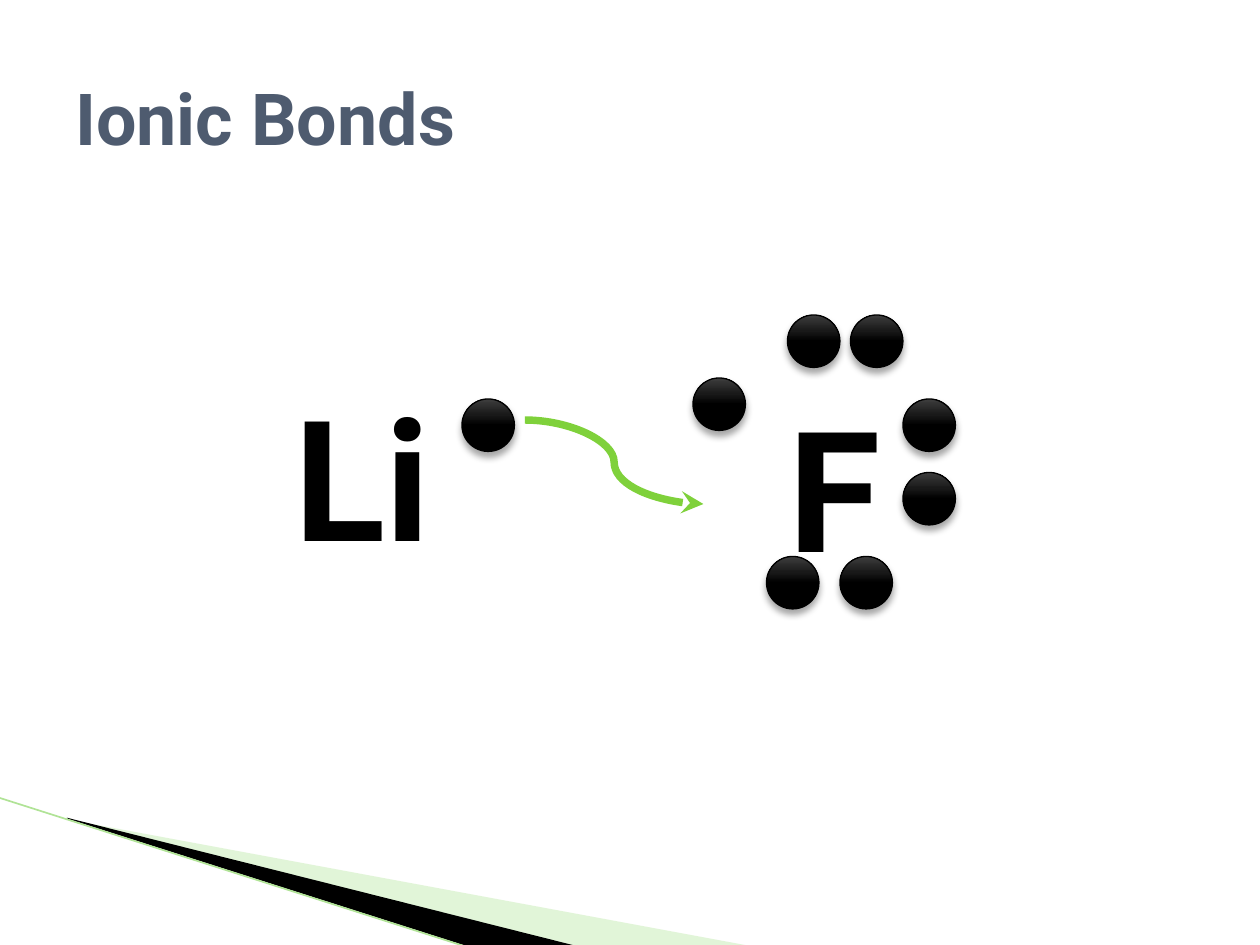
from lxml import etree
from pptx import Presentation
from pptx import util as u
from pptx.dml import color
from pptx.enum import shapes, text
from pptx.oxml import ns

Pt = u.Pt
GREEN, BLACK, SLATE = "7FD13B", "000000", "4E5B6F"
DOT = 30
DOT_STOPS = [(0, BLACK), (50, BLACK), (70, "191919"), (100, "3E3E3E")]


def rgb(value):
    return color.RGBColor.from_string(value)


def child(parent, tag, **attributes):
    """Append a drawing element with the given attributes."""
    values = {name: str(value) for name, value in attributes.items()}
    return etree.SubElement(parent, ns.qn(f"a:{tag}"), values)


def add_label(page, box, words, size, hue, **frame_format):
    frame = page.shapes.add_textbox(*map(Pt, box)).text_frame
    settings = {"word_wrap": True, "auto_size": text.MSO_AUTO_SIZE.NONE, **frame_format}
    for name, value in settings.items():
        setattr(frame, name, value)
    para = frame.paragraphs[0]
    span = para.add_run()
    span.text = words
    for name, value in {"name": "Roboto", "size": Pt(size), "bold": True}.items():
        setattr(span.font, name, value)
    span.font.color.rgb = rgb(hue)
    return para


def add_line(page, kind, start, end, hue, width):
    line = page.shapes.add_connector(kind, *map(Pt, start + end))
    line.line.color.rgb = rgb(hue)
    line.line.width = Pt(width)
    child(line._element.spPr, "effectLst")
    return line


def add_wedge(page, points, hue, opacity=100):
    corners = [tuple(map(Pt, point)) for point in points]
    builder = page.shapes.build_freeform(*corners[0])
    builder.add_line_segments(corners[1:], close=True)
    wedge = builder.convert_to_shape()
    wedge.shadow.inherit = False
    wedge.fill.solid()
    wedge.fill.fore_color.rgb = rgb(hue)
    wedge.line.fill.background()
    if opacity < 100:
        shade = wedge._element.spPr.find(".//" + ns.qn("a:srgbClr"))
        child(shade, "alpha", val=opacity * 1000)


def add_corner_bands(page, left, bottom):
    """Draw the slanted bands that run down to the bottom edge."""
    pale = [(39.6, -71.5), (428.4, 0.5), (328.3, 0.5), (39.6, -72)]
    dark = [(38.2, -72.7), (329, 0.5), (267.8, 1), (38.9, -72)]
    for points, hue, opacity in [(pale, "B6E69E", 40), (dark, BLACK, 100)]:
        add_wedge(page, [(left + x, bottom + y) for x, y in points], hue, opacity)
    add_line(page, shapes.MSO_CONNECTOR.STRAIGHT, (left - 0.7, bottom - 84.2),
             (left + 267.1, bottom + 1.2), "B0E396", 0.95)


def add_electron(page, left, top):
    dot = page.shapes.add_shape(shapes.MSO_SHAPE.OVAL, Pt(left), Pt(top), Pt(DOT), Pt(DOT))
    dot.fill.gradient()
    dot.fill.gradient_angle = 90
    dot.line.color.rgb = rgb(BLACK)
    dot.line.width = Pt(0.75)
    dot.shadow.inherit = False
    properties = dot._element.spPr
    stops = properties.find(".//" + ns.qn("a:gsLst"))
    for stop in list(stops):
        stops.remove(stop)
    for place, hue in DOT_STOPS:
        child(child(stops, "gs", pos=place * 1000), "srgbClr", val=hue)
    shadow = child(properties.find(ns.qn("a:effectLst")), "outerShdw", blurRad=Pt(4),
                   dist=Pt(3), dir=90 * 60000, rotWithShape=0)
    child(child(shadow, "srgbClr", val=BLACK), "alpha", val=35000)


def add_atom(page, box, symbol, electrons):
    """Write the symbol in the box, with electrons offset from its corner."""
    para = add_label(page, box, symbol, 96, BLACK)
    para.alignment = text.PP_ALIGN.CENTER
    for x, y in electrons:
        add_electron(page, box[0] + x, box[1] + y)


def add_transfer_arrow(page, start, end):
    arrow = add_line(page, shapes.MSO_CONNECTOR.CURVE, start, end, GREEN, 4.25)
    child(arrow.line._get_or_add_ln(), "tailEnd", type="stealth")


def main():
    deck = Presentation()
    deck.slide_width, deck.slide_height = Pt(720), Pt(540)
    page = deck.slides.add_slide(deck.slide_layouts[6])
    add_corner_bands(page, 0, 540)
    add_label(page, (36, 21.6, 648, 90), "Ionic Bonds", 41, SLATE,
              vertical_anchor=text.MSO_ANCHOR.MIDDLE)
    add_atom(page, (126, 210, 162, 124), "Li", [(138, 18)])
    add_atom(page, (396, 216, 162, 124), "F",
             [(54, -36), (90, -36), (120, 12), (120, 54), (84, 102), (42, 102), (0, 0)])
    add_transfer_arrow(page, (300, 240), (402, 288))
    deck.save("out.pptx")


if __name__ == "__main__":
    main()
